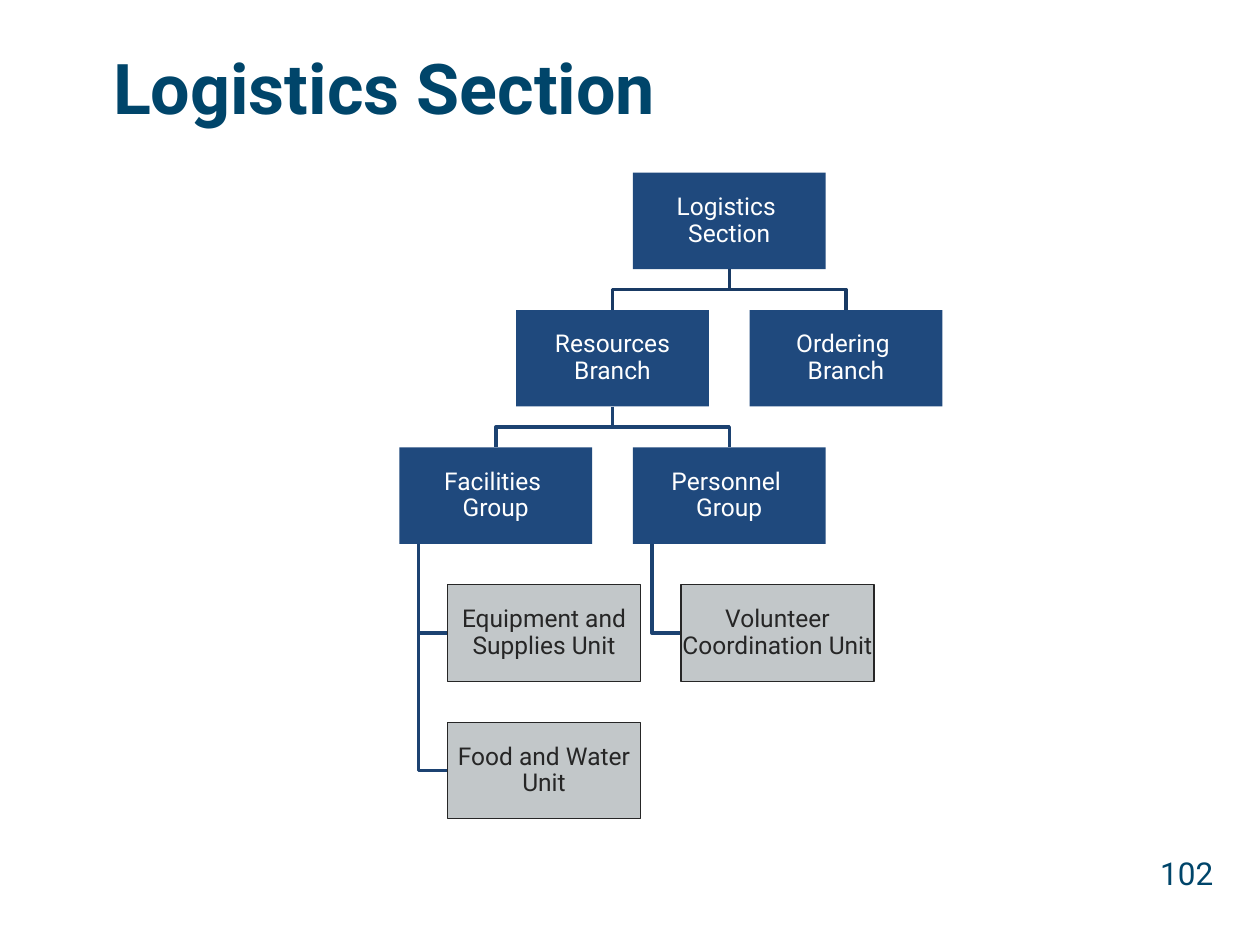
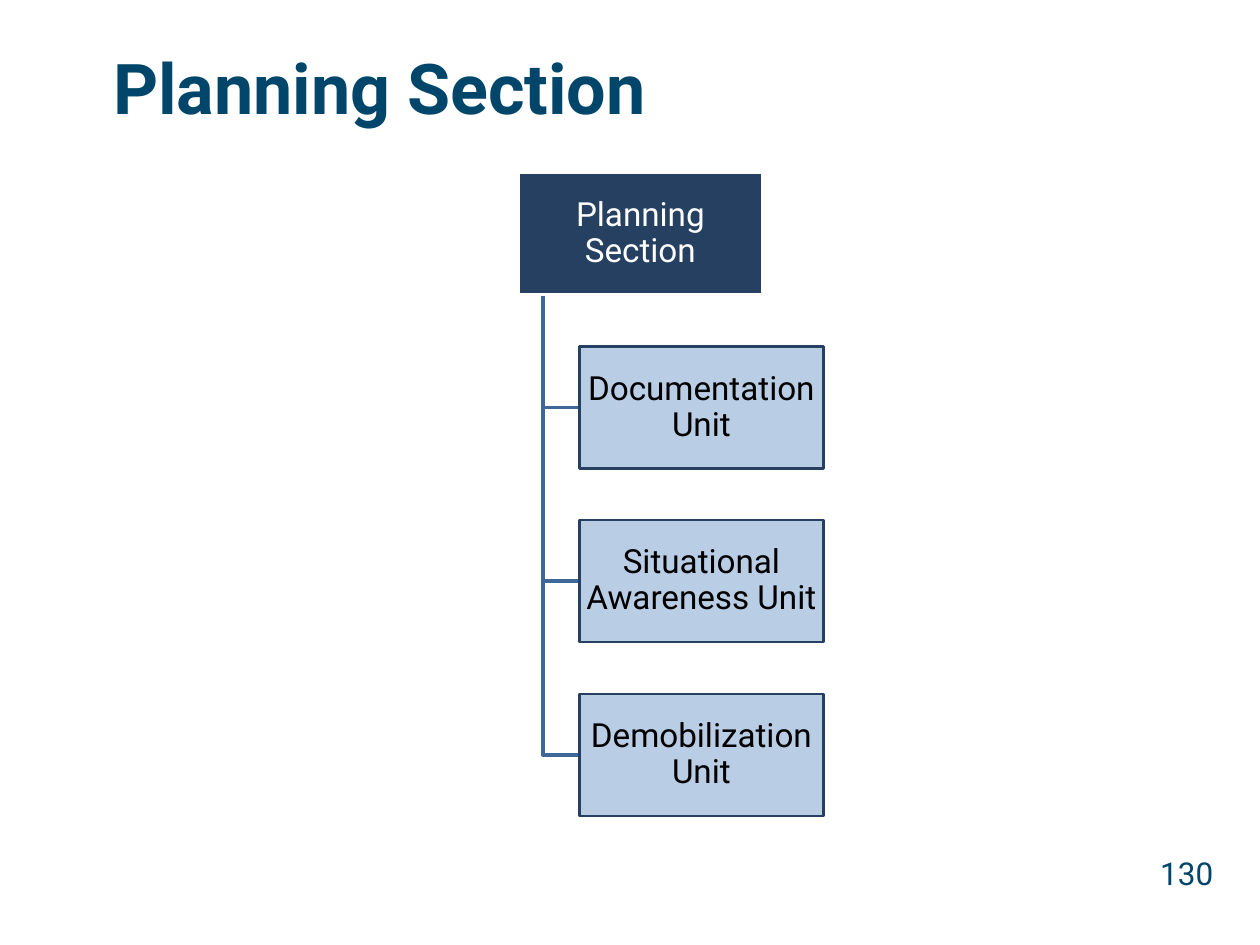
from dataclasses import dataclass

from lxml import etree
from pptx import Presentation
from pptx import util as u
from pptx.dml import color
from pptx.enum import shapes, text
from pptx.oxml import ns

FONT = "Roboto"
TEAL, WHITE = "00456A", "FFFFFF"
TOP = 3.48


@dataclass
class Look:
    """Fill, text colour, border colour and border width of a box."""
    fill: str
    ink: str
    edge: str = ""
    width: float = 0


@dataclass
class Chart:
    """Slide, left edge, box width, text size and line colour of a chart."""
    slide: object
    left: float
    wide: float
    size: int
    line: str

    @property
    def high(self):
        """Return the box height."""
        return self.wide / 2

    def spot(self, col, row):
        """Return the corner of a box, with columns half a sibling step apart."""
        return self.left + col * self.wide * 0.605, TOP + row * self.wide * 0.712


NAVY = Look("1F497D", WHITE)
GRAY = Look("C2C7C9", "262626", "262626", 0.75)
DARK = Look("254061", WHITE, WHITE, 1.5)
PALE = Look("B9CDE5", "000000", "254061", 1.5)

INDENT = 0.25 / 0.605


def paint(target, code):
    """Give a font, fill or line a solid colour from a hex string."""
    if hasattr(target, "solid"):
        target.solid()
        target.fore_color.rgb = color.RGBColor.from_string(code)
    else:
        target.color.rgb = color.RGBColor.from_string(code)


def write(frame, words, size, ink, align, bold=False):
    """Put one formatted paragraph in a text frame."""
    frame.word_wrap = True
    par = frame.paragraphs[0]
    par.text = words
    par.alignment = align
    for run in par.runs:
        run.font.name, run.font.size, run.font.bold = FONT, u.Pt(size), bold
        paint(run.font, ink)
    for gap in par._p.findall(ns.qn("a:br")):
        etree.SubElement(gap, ns.qn("a:rPr"), sz=str(size * 100))
    return par


def label(slide, words, area, size, align, anchor, bold=False):
    """Add a teal text box."""
    frame = slide.shapes.add_textbox(*map(u.Cm, area)).text_frame
    frame.vertical_anchor = anchor
    write(frame, words, size, TEAL, align, bold)


def page(deck, title, number):
    """Add a slide with its title and number."""
    slide = deck.slides.add_slide(deck.slide_layouts[6])
    label(slide, number, (22.17, 17.09, 2.54, 1.47), 18,
          text.PP_ALIGN.RIGHT, text.MSO_ANCHOR.TOP)
    label(slide, title, (2.03, 0.15, 22.63, 3.18), 40,
          text.PP_ALIGN.LEFT, text.MSO_ANCHOR.MIDDLE, True)
    return slide


def box(chart, words, col, row, look):
    """Add a box of the chart."""
    area = (*chart.spot(col, row), chart.wide, chart.high)
    rect = chart.slide.shapes.add_shape(
        shapes.MSO_SHAPE.RECTANGLE, *map(u.Cm, area))
    rect.shadow.inherit = False
    paint(rect.fill, look.fill)
    if look.edge:
        paint(rect.line, look.edge)
        rect.line.width = u.Pt(look.width)
    else:
        rect.line.fill.background()
    frame = rect.text_frame
    frame.margin_left = frame.margin_right = u.Cm(0.02)
    frame.margin_top = frame.margin_bottom = u.Cm(0.02)
    frame.vertical_anchor = text.MSO_ANCHOR.MIDDLE
    par = write(frame, words, chart.size, look.ink, text.PP_ALIGN.CENTER)
    par.line_spacing = 0.9


def trace(chart, points, code):
    """Draw an open bent line through points."""
    start, *rest = [tuple(map(u.Cm, point)) for point in points]
    pen = chart.slide.shapes.build_freeform(*start)
    pen.add_line_segments(rest, close=False)
    bent = pen.convert_to_shape()
    bent.shadow.inherit = False
    bent.fill.background()
    paint(bent.line, code)
    bent.line.width = u.Pt(2)


def fork(chart, col, row, code):
    """Link a box to the two boxes below it."""
    x, y = chart.spot(col, row)
    x, y = x + chart.wide / 2, y + chart.high
    for kid in (col + 1, col - 1):
        end, low = chart.spot(kid, row + 1)
        end += chart.wide / 2
        mid = (y + low) / 2
        trace(chart, [(x, y), (x, mid), (end, mid), (end, low)], code)


def hang(chart, col, row, count):
    """Link a box to the indented boxes that hang below it."""
    x, y = chart.spot(col, row)
    stem, side = x + chart.wide * 0.1, x + chart.wide * 0.25
    for step in range(count, 0, -1):
        low = chart.spot(col, row + step)[1] + chart.high / 2
        trace(chart, [(stem, y + chart.high), (stem, low), (side, low)],
              chart.line)


def supply(deck):
    """Build the logistics slide."""
    chart = Chart(page(deck, "Logistics Section", "102"),
                  8.05, 3.89, 14, "1C4271")
    fork(chart, 2, 0, "193A64")
    fork(chart, 1, 1, chart.line)
    hang(chart, 0, 2, 2)
    hang(chart, 2, 2, 1)
    for words, col, row in (
            ("Logistics \nSection", 2, 0),
            ("Resources Branch", 1, 1), ("Ordering \nBranch", 3, 1),
            ("Facilities \nGroup", 0, 2), ("Personnel \nGroup", 2, 2)):
        box(chart, words, col, row, NAVY)
    for words, col, row in (
            ("Equipment and Supplies Unit", 0, 3),
            ("Food and Water Unit", 0, 4),
            ("Volunteer Coordination Unit", 2, 3)):
        box(chart, words, col + INDENT, row, GRAY)


def plan(deck):
    """Build the planning slide."""
    chart = Chart(page(deck, "Planning Section", "130"),
                  10.45, 4.92, 19, "3F6797")
    units = ("Documentation Unit", "Situational Awareness Unit",
             "Demobilization Unit")
    hang(chart, 0, 0, len(units))
    box(chart, "Planning Section", 0, 0, DARK)
    for row, words in enumerate(units, 1):
        box(chart, words, INDENT, row, PALE)


def main():
    """Build and save the deck."""
    deck = Presentation()
    deck.slide_width, deck.slide_height = u.Cm(25.4), u.Cm(19.05)
    supply(deck)
    plan(deck)
    deck.save("out.pptx")


if __name__ == "__main__":
    main()
